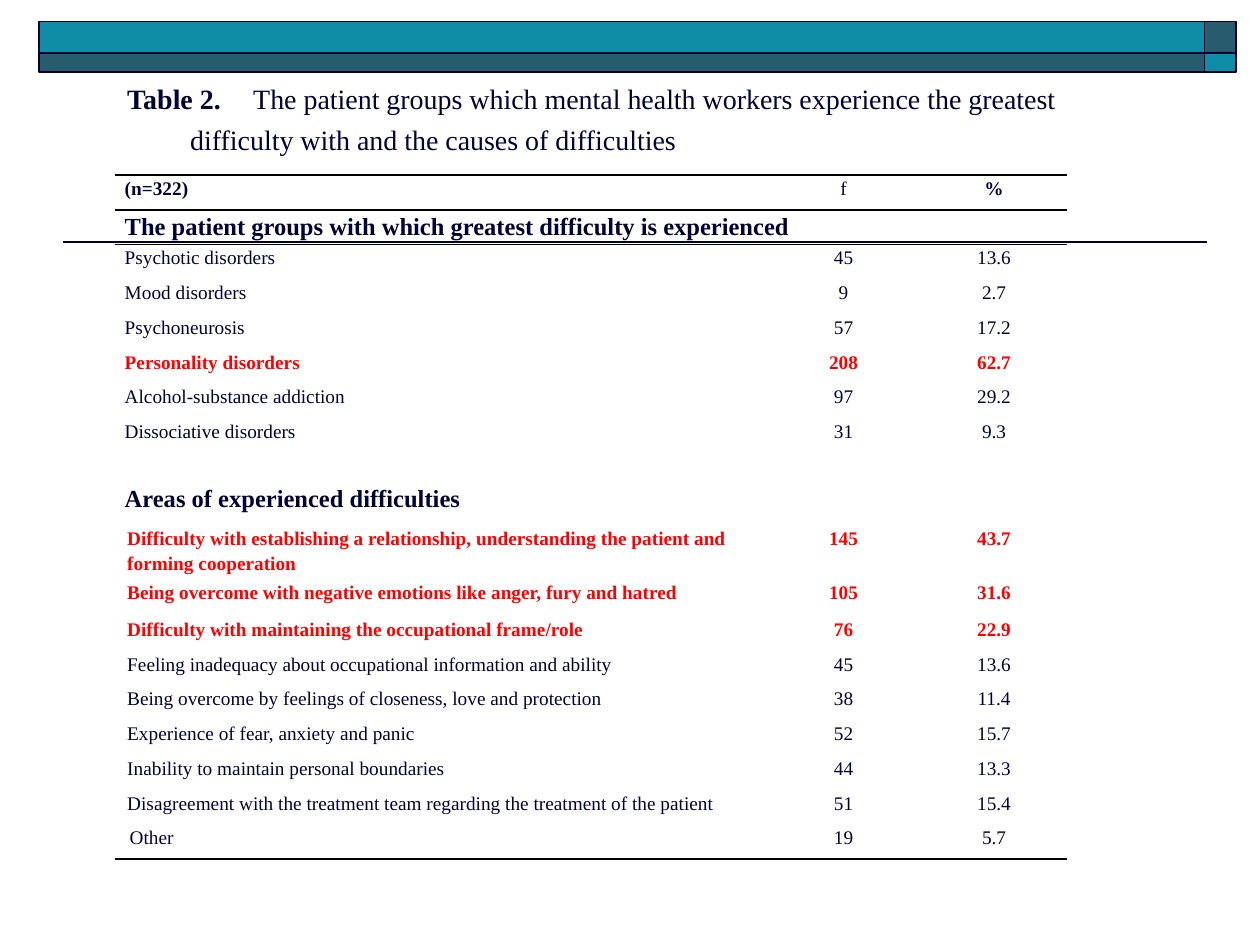
from lxml.etree import SubElement
from pptx import Presentation
from pptx.dml.color import RGBColor
from pptx.enum.shapes import MSO_CONNECTOR, MSO_SHAPE
from pptx.enum.text import MSO_ANCHOR, MSO_AUTO_SIZE, PP_ALIGN
from pptx.oxml.ns import qn
from pptx.util import Inches, Pt

INK, RED, BLACK = "000033", "FF0000", "000000"
TEAL, SLATE = "108DA6", "275C6D"
PLAIN_GRID = "{2D5ABB26-0587-4C30-8999-92F81FD0307C}"


def color(code):
    return RGBColor.from_string(code)


class Deck:
    font = "Times New Roman"

    def __init__(self, wide, high):
        self.show = Presentation()
        self.show.slide_width = Inches(wide)
        self.show.slide_height = Inches(high)
        self.slide = self.show.slides.add_slide(self.show.slide_layouts[1])
        title = self.slide.shapes.title._element
        title.getparent().remove(title)

    def style(self, run, size, bold=False, ink=INK):
        run.font.name = self.font
        run.font.size = Pt(size)
        run.font.bold = bold
        run.font.color.rgb = color(ink)

    def rule(self, left, right, top):
        line = self.slide.shapes.add_connector(
            MSO_CONNECTOR.STRAIGHT, Inches(right), Inches(top), Inches(left), Inches(top))
        line.line.color.rgb = color(INK)
        line.line.width = Pt(1)
        SubElement(line._element.spPr, qn("a:effectLst"))

    def box(self, left, top, wide, high, fill):
        shape = self.slide.shapes.add_shape(
            MSO_SHAPE.RECTANGLE, *map(Inches, (left, top, wide, high)))
        shape.shadow.inherit = False
        shape.fill.solid()
        shape.fill.fore_color.rgb = color(fill)
        shape.line.color.rgb = color(INK)
        shape.line.width = Pt(1)

    def caption(self, left, top, wide, high, label, lines):
        body = self.slide.placeholders[1]
        body.left, body.top, body.width, body.height = map(Inches, (left, top, wide, high))
        frame = body.text_frame
        frame.auto_size = MSO_AUTO_SIZE.NONE
        frame.vertical_anchor = MSO_ANCHOR.TOP
        frame.text = label
        frame.paragraphs[0].runs[0].text = label
        for count, line in enumerate(lines):
            para = frame.add_paragraph() if count else frame.paragraphs[0]
            para.add_run().text = "\t" + line
            para.space_before = Pt(4)
            props = para._p.get_or_add_pPr()
            props.set("marL", "0")
            props.set("indent", "0")
            SubElement(props, qn("a:buNone"))
            for run in para.runs:
                self.style(run, 16, run.text == label)

    def table(self, left, top, cols, rows):
        shape = self.slide.shapes.add_table(
            len(rows), len(cols), Inches(left), Inches(top),
            Inches(sum(cols)), Inches(sum(rows)))
        grid = shape.table
        grid.first_row = grid.horz_banding = False
        grid._tbl.tblPr.find(qn("a:tableStyleId")).text = PLAIN_GRID
        for col, wide in zip(grid.columns, cols):
            col.width = Inches(wide)
        for row, high in zip(grid.rows, rows):
            row.height = Inches(high)
        return grid

    def cell(self, cell, text, size=11, bold=False, ink=INK, center=False,
             inset=0.08, above=0, edges=()):
        cell.margin_left, cell.margin_right = Inches(inset), Inches(0.08)
        cell.margin_top, cell.margin_bottom = Inches(above), 0
        cell.text_frame.text = text
        para = cell.text_frame.paragraphs[0]
        para.line_spacing = 1.15
        para.alignment = PP_ALIGN.CENTER if center else PP_ALIGN.LEFT
        for run in para.runs:
            self.style(run, size, bold, ink)
        props = cell._tc.get_or_add_tcPr()
        for edge in edges:
            line = SubElement(props, qn("a:" + edge), w=str(Pt(1)))
            fill = SubElement(line, qn("a:solidFill"))
            SubElement(fill, qn("a:srgbClr"), val=BLACK)
        cell.fill.background()

    def heading(self, grid, row, text, above=0, edges=()):
        grid.cell(row, 0).merge(grid.cell(row, 2))
        self.cell(grid.cell(row, 0), text, 14, True, above=above, edges=edges)

    def entries(self, grid, start, items, inset=0.08):
        for row, (name, *values, key) in enumerate(items, start):
            look = {"bold": key, "ink": RED if key else INK}
            self.cell(grid.cell(row, 0), name, inset=inset, **look)
            for col, value in enumerate(values, 1):
                self.cell(grid.cell(row, col), value, center=True, **look)


GROUPS = [
    ("Psychotic disorders", "45", "13.6", False),
    ("Mood disorders", "9", "2.7", False),
    ("Psychoneurosis", "57", "17.2", False),
    ("Personality disorders", "208", "62.7", True),
    ("Alcohol-substance addiction", "97", "29.2", False),
    ("Dissociative disorders", "31", "9.3", False),
]
AREAS = [
    ("Difficulty with establishing a relationship, understanding the patient and "
     "forming cooperation", "145", "43.7", True),
    ("Being overcome with negative emotions like anger, fury and hatred", "105", "31.6", True),
    ("Difficulty with maintaining the occupational frame/role", "76", "22.9", True),
    ("Feeling inadequacy about occupational information and ability", "45", "13.6", False),
    ("Being overcome by feelings of closeness, love and protection", "38", "11.4", False),
    ("Experience of fear, anxiety and panic", "52", "15.7", False),
    ("Inability to maintain personal boundaries", "44", "13.3", False),
    ("Disagreement with the treatment team regarding the treatment of the patient",
     "51", "15.4", False),
]


def main():
    deck = Deck(10, 7.5)
    deck.rule(0.5, 9.58, 1.92)
    deck.box(9.56, 0.17, 0.25, 0.25, SLATE)
    deck.box(0.31, 0.17, 9.25, 0.25, TEAL)
    deck.box(0.31, 0.42, 9.25, 0.15, SLATE)
    deck.box(9.56, 0.42, 0.25, 0.15, TEAL)
    deck.caption(0.91, 0.6, 8.58, 0.63, "Table 2.", [
        "The patient groups which mental health workers experience the greatest",
        "difficulty with and the causes of difficulties"])

    tall = [0.3, 0.55, 0.43, 0.29]
    base = (5.43 - sum(tall)) / 14
    grid = deck.table(0.91, 1.39, [5.17, 1.23, 1.16], [base] * 7 + tall + [base] * 7)
    for col, text in enumerate(["(n=322)", "f", "%"]):
        deck.cell(grid.cell(0, col), text, bold=text != "f", center=col > 0,
                  edges=("lnT", "lnB"))
    deck.heading(grid, 1, "The patient groups with which greatest difficulty is experienced",
                 edges=("lnT",))
    deck.entries(grid, 2, GROUPS)
    deck.heading(grid, 8, "Areas of experienced difficulties", above=0.2)
    deck.entries(grid, 9, AREAS, inset=0.1)
    for col, text in enumerate(["Other", "19", "5.7"]):
        deck.cell(grid.cell(17, col), text, center=col > 0,
                  inset=0.08 if col else 0.12, edges=("lnB",))
    deck.show.save("out.pptx")


if __name__ == "__main__":
    main()
